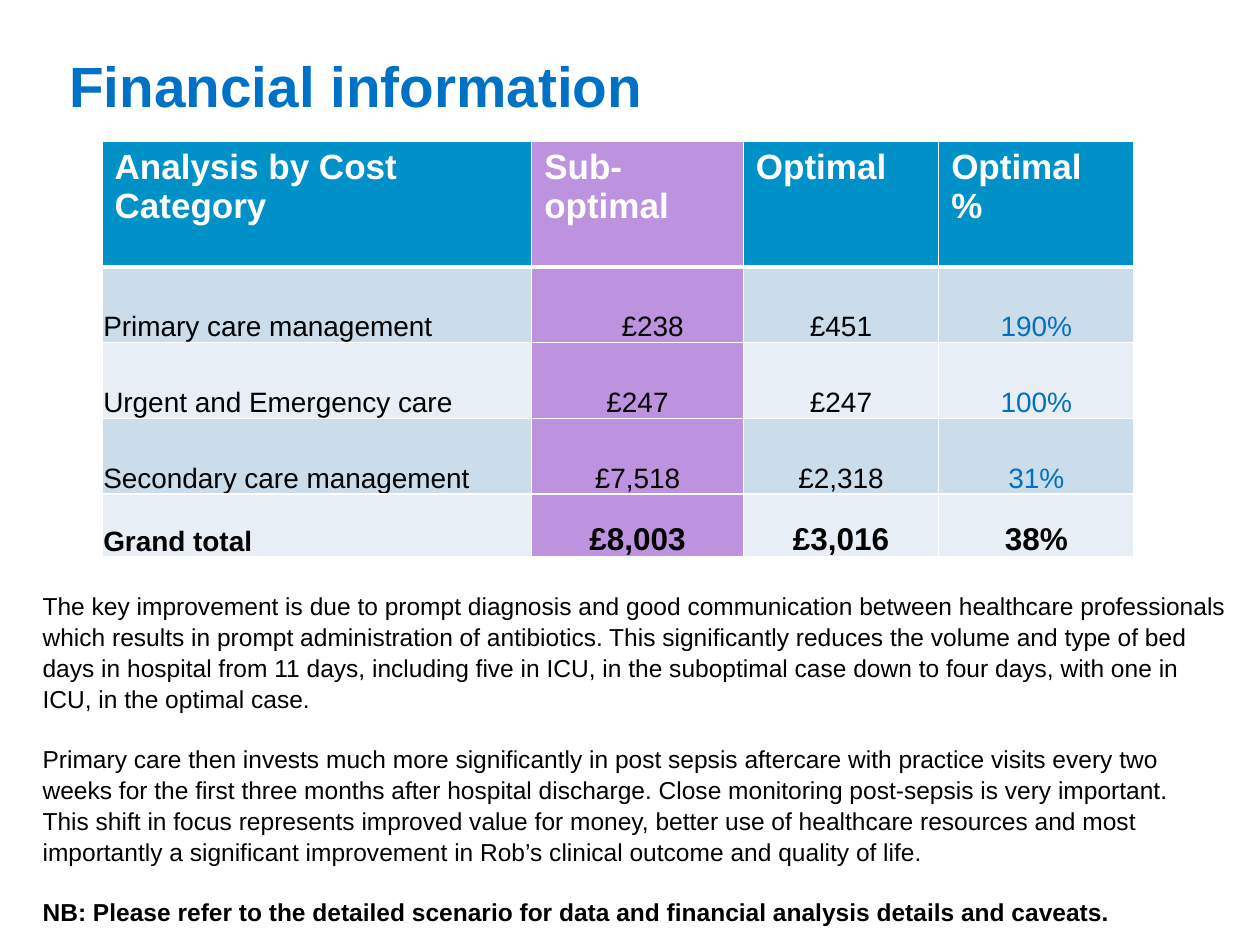
from pptx import Presentation
from pptx.dml.color import RGBColor
from pptx.enum.text import MSO_ANCHOR as Anchor, PP_ALIGN as Align
from pptx.oxml import parse_xml
from pptx.oxml.ns import nsdecls
from pptx.util import Inches, Pt

COLORS = {
    "title": "0072C6", "header": "0091C9", "suboptimal": "BD92DE",
    "band_dark": "CBDCEB", "band_light": "E7EEF5",
    "percent": "0070C0", "text": "000000", "white": "FFFFFF",
}
HEADERS = ["Analysis by Cost Category", "Sub-optimal", "Optimal", "Optimal %"]
COSTS = [
    ["Primary care management", "£238", "£451", "190%"],
    ["Urgent and Emergency care", "£247", "£247", "100%"],
    ["Secondary care management", "£7,518", "£2,318", "31%"],
    ["Grand total", "£8,003", "£3,016", "38%"],
]
COLUMN_WIDTHS = [3.41, 1.68, 1.55, 1.55]
ROW_HEIGHTS = [1, 0.6, 0.6, 0.6, 0.5]
COMMENTARY = [
    ("The key improvement is due to prompt diagnosis and good communication between "
     "healthcare professionals which results in prompt administration of antibiotics. "
     "This significantly reduces the volume and type of bed days in hospital from 11 days, "
     "including five in ICU, in the suboptimal case down to four days, with one in ICU, "
     "in the optimal case.", {}),
    ("Primary care then invests much more significantly in post sepsis aftercare with "
     "practice visits every two weeks for the first three months after hospital discharge. "
     "Close monitoring post-sepsis is very important.", {"before": 16.9}),
    ("This shift in focus represents improved value for money, better use of healthcare "
     "resources and most importantly a significant improvement in Rob’s clinical outcome "
     "and quality of life.", {}),
    ("NB: Please refer to the detailed scenario for data and financial analysis details "
     "and caveats.", {"before": 16.9, "bold": True}),
]


def write(paragraph, text, size=14, color="text", bold=False, align=Align.LEFT,
          before=0, spacing=None):
    paragraph.alignment = align
    paragraph.space_before = Pt(before)
    paragraph.line_spacing = spacing
    run = paragraph.add_run()
    run.text = text
    run.font.name = "Arial"
    run.font.size = Pt(size)
    run.font.bold = bold
    run.font.color.rgb = RGBColor.from_string(COLORS[color])


def set_borders(cell, top, bottom):
    """Draw white cell borders; top and bottom are widths in points."""
    properties = cell._tc.get_or_add_tcPr()
    widths = {"lnL": 1, "lnR": 1, "lnT": top, "lnB": bottom}
    for position, (side, width) in enumerate(widths.items()):
        properties.insert(position, parse_xml(
            f'<a:{side} {nsdecls("a")} w="{Pt(width)}"><a:solidFill>'
            f'<a:srgbClr val="{COLORS["white"]}"/></a:solidFill></a:{side}>'))


class FinanceSlide:
    def __init__(self, presentation):
        self.slide = presentation.slides.add_slide(presentation.slide_layouts[5])

    def title(self, text, left, top, width, height):
        shape = self.slide.shapes.title
        shape.left, shape.top = Inches(left), Inches(top)
        shape.width, shape.height = Inches(width), Inches(height)
        shape.text_frame.vertical_anchor = Anchor.MIDDLE
        write(shape.text_frame.paragraphs[0], text, size=32.4, color="title", bold=True)

    def text_box(self, paragraphs, left, top, width, height):
        shape = self.slide.shapes.add_textbox(
            Inches(left), Inches(top), Inches(width), Inches(height))
        frame = shape.text_frame
        frame.word_wrap = True
        for index, (text, style) in enumerate(paragraphs):
            paragraph = frame.add_paragraph() if index else frame.paragraphs[0]
            write(paragraph, text, spacing=1.05, **style)

    def cost_table(self, left, top):
        rows = [HEADERS, *COSTS]
        table = self.slide.shapes.add_table(
            len(rows), len(HEADERS), Inches(left), Inches(top),
            Inches(sum(COLUMN_WIDTHS)), Inches(sum(ROW_HEIGHTS))).table
        for column, width in zip(table.columns, COLUMN_WIDTHS):
            column.width = Inches(width)
        for row, height in zip(table.rows, ROW_HEIGHTS):
            row.height = Inches(height)
        for row_index, row in enumerate(rows):
            for column_index, text in enumerate(row):
                self.cost_cell(table.cell(row_index, column_index), text,
                               row_index, column_index)
        # The first sub-optimal cost sits right of its column's centre
        table.cell(1, 1).margin_left = Inches(0.25)

    def cost_cell(self, cell, text, row, column):
        is_header, is_total = row == 0, row == len(COSTS)
        band = "header" if is_header else "band_dark" if row % 2 else "band_light"
        cell.fill.solid()
        cell.fill.fore_color.rgb = RGBColor.from_string(
            COLORS["suboptimal" if column == 1 else band])
        set_borders(cell, top=3 if row == 1 else 1, bottom=3 if is_header else 1)
        paragraph = cell.text_frame.paragraphs[0]
        if is_header:
            write(paragraph, text, size=20, color="white", bold=True)
            return
        cell.vertical_anchor = Anchor.BOTTOM
        cell.margin_left = cell.margin_right = cell.margin_top = Inches(0.01)
        cell.margin_bottom = 0
        write(paragraph, text,
              size=18 if is_total and column else 16,
              color="percent" if column == 3 and not is_total else "text",
              bold=is_total,
              align=Align.CENTER if column else Align.LEFT)


def main():
    presentation = Presentation()
    presentation.slide_width, presentation.slide_height = Inches(10), Inches(7.5)
    finance = FinanceSlide(presentation)
    finance.title("Financial information", 0.45, 0.4, 8.05, 0.55)
    finance.text_box(COMMENTARY, 0.24, 4.63, 9.63, 2.69)
    finance.cost_table(0.81, 1.12)
    presentation.save("out.pptx")


if __name__ == "__main__":
    main()
